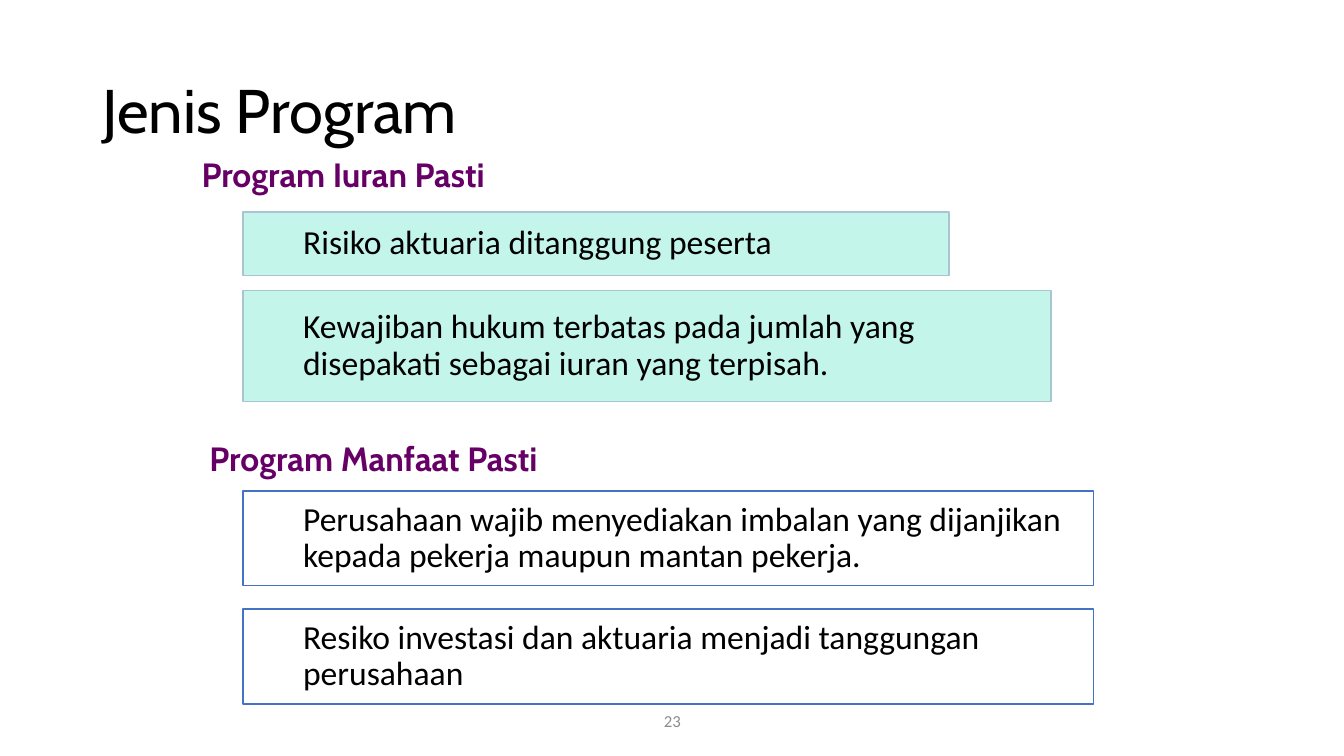
from pptx import Presentation
from pptx.dml.color import RGBColor
from pptx.enum.shapes import MSO_SHAPE as SHAPE
from pptx.enum.text import MSO_ANCHOR as ANCHOR, MSO_AUTO_SIZE as AUTO, PP_ALIGN as ALIGN
from pptx.util import Cm, Pt

BLACK, PURPLE, GREY = "000000", "660066", "8C8C8C"
MINT, WHITE = "C3F5EB", "FFFFFF"
PALE_LINE, BLUE_LINE = "A9C4D2", "4472C4"


def color(value):
    return RGBColor.from_string(value)


def write(sp, text, size, font, hue, bold=False, align=ALIGN.LEFT, anchor=ANCHOR.MIDDLE):
    tf = sp.text_frame
    tf.text = text
    tf.word_wrap = True
    tf.auto_size = AUTO.NONE
    tf.vertical_anchor = anchor
    p = tf.paragraphs[0]
    p.alignment = align
    f = p.runs[0].font
    f.size, f.name, f.bold = Pt(size), font, bold
    f.color.rgb = color(hue)
    return p


def add_title(s, text, left, top, width, height):
    sp = s.shapes.title
    sp.left, sp.top, sp.width, sp.height = Cm(left), Cm(top), Cm(width), Cm(height)
    write(sp, text, 44, "Cabin", BLACK).line_spacing = 0.9


def add_heading(s, text, left, top):
    sp = s.shapes.add_textbox(Cm(left), Cm(top), Cm(10.11), Cm(1.28))
    write(sp, text, 24, "Cabin", PURPLE, bold=True, anchor=ANCHOR.TOP)


def add_point(s, text, left, top, width, height, fill, line):
    sp = s.shapes.add_shape(SHAPE.RECTANGLE, Cm(left), Cm(top), Cm(width), Cm(height))
    sp.shadow.inherit = False
    sp.fill.solid()
    sp.fill.fore_color.rgb = color(fill)
    sp.line.color.rgb = color(line)
    sp.line.width = Pt(1)
    p = write(sp, text, 24, "Calibri", BLACK)
    p.level = 1
    p.line_spacing = 0.9
    pPr = p._p.get_or_add_pPr()
    pPr.set("marL", str(Cm(1.27)))
    pPr.set("indent", "0")


def add_program(s, left, top, heading, indent, points, fill, line):
    add_heading(s, heading, left - indent, top)
    for text, offset, width, height in points:
        add_point(s, text, left, top + offset, width, height, fill, line)


def add_page_number(s, number, left, top, width, height):
    sp = s.shapes.add_textbox(Cm(left), Cm(top), Cm(width), Cm(height))
    write(sp, number, 12, "Calibri", GREY, align=ALIGN.CENTER)


def main():
    prs = Presentation()
    prs.slide_width, prs.slide_height = Cm(33.87), Cm(19.05)
    s = prs.slides.add_slide(prs.slide_layouts[5])
    add_title(s, "Jenis Program", 2.33, 1.01, 29.21, 3.68)
    add_program(s, 6.12, 3.76, "Program Iuran Pasti", 1.29, [
        ("Risiko aktuaria ditanggung peserta", 1.58, 17.8, 1.6),
        ("Kewajiban hukum terbatas pada jumlah yang disepakati sebagai iuran yang terpisah.",
         3.56, 20.37, 2.8),
    ], MINT, PALE_LINE)
    add_program(s, 6.12, 10.92, "Program Manfaat Pasti", 1.09, [
        ("Perusahaan wajib menyediakan imbalan yang dijanjikan kepada pekerja maupun mantan pekerja.",
         1.45, 21.44, 2.39),
        ("Resiko investasi dan aktuaria menjadi tanggungan perusahaan", 4.43, 21.44, 2.39),
    ], WHITE, BLUE_LINE)
    add_page_number(s, "23", 11.23, 17.66, 11.43, 1.01)
    prs.save("out.pptx")


if __name__ == "__main__":
    main()
